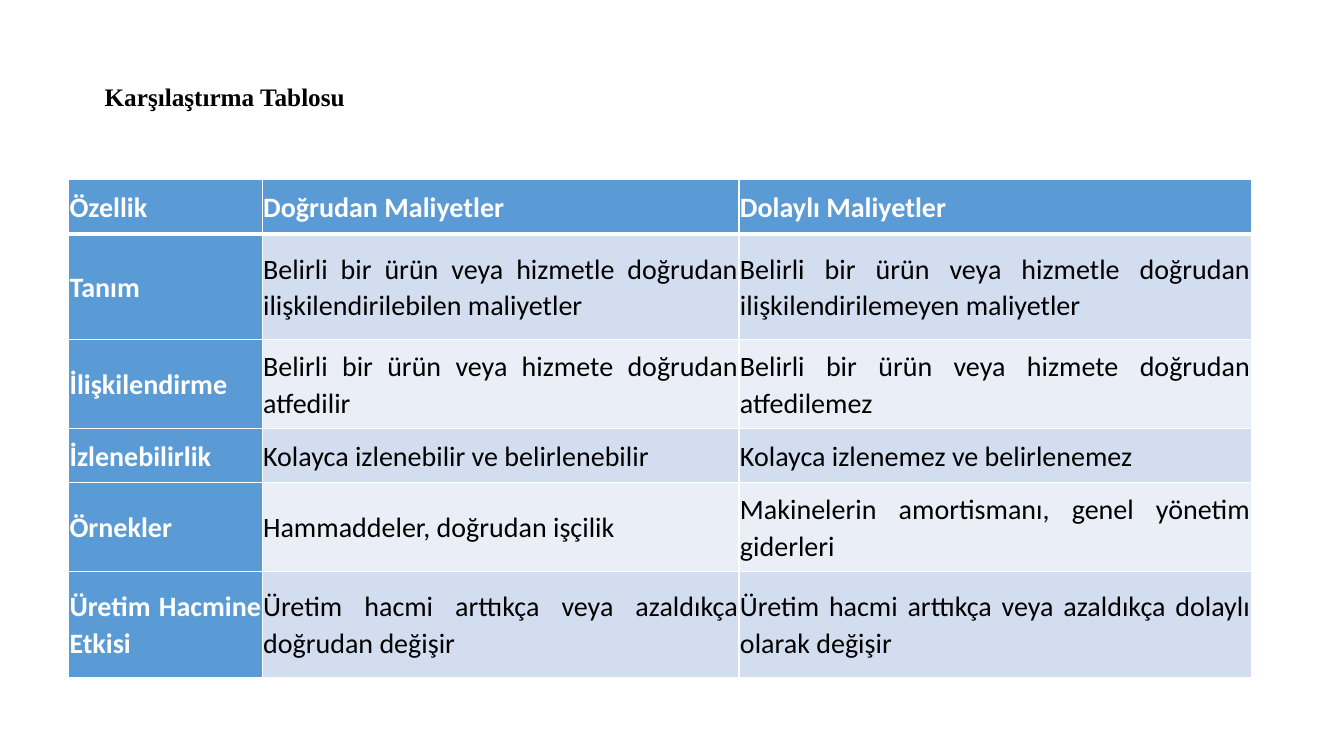
"""Build a slide with a table comparing direct and indirect costs."""
from dataclasses import dataclass

from lxml import etree
from pptx import Presentation
from pptx.dml.color import RGBColor
from pptx.enum.text import MSO_ANCHOR, MSO_AUTO_SIZE, PP_ALIGN
from pptx.oxml.ns import qn
from pptx.util import Inches, Pt

JUSTIFY = PP_ALIGN.JUSTIFY
MIDDLE = MSO_ANCHOR.MIDDLE
FIT_SHAPE = MSO_AUTO_SIZE.SHAPE_TO_FIT_TEXT

BLACK = RGBColor(0x00, 0x00, 0x00)
WHITE = RGBColor(0xFF, 0xFF, 0xFF)
BLUE = RGBColor(0x5B, 0x9B, 0xD5)
BAND_DARK = RGBColor(0xD2, 0xDE, 0xEF)
BAND_LIGHT = RGBColor(0xEA, 0xEF, 0xF7)

COLUMN_WIDTHS = (1.92, 4.73, 5.08)
CELL_MARGIN = Inches(0.01)


@dataclass(frozen=True)
class ComparisonRow:
    height: float
    feature: str
    direct: str
    indirect: str


ROWS = (
    ComparisonRow(0.54, "Özellik", "Doğrudan Maliyetler", "Dolaylı Maliyetler"),
    ComparisonRow(
        1.05,
        "Tanım",
        "Belirli bir ürün veya hizmetle doğrudan ilişkilendirilebilen maliyetler",
        "Belirli bir ürün veya hizmetle doğrudan ilişkilendirilemeyen maliyetler",
    ),
    ComparisonRow(
        0.88,
        "İlişkilendirme",
        "Belirli bir ürün veya hizmete doğrudan atfedilir",
        "Belirli bir ürün veya hizmete doğrudan atfedilemez",
    ),
    ComparisonRow(
        0.54,
        "İzlenebilirlik",
        "Kolayca izlenebilir ve belirlenebilir",
        "Kolayca izlenemez ve belirlenemez",
    ),
    ComparisonRow(
        0.88,
        "Örnekler",
        "Hammaddeler, doğrudan işçilik",
        "Makinelerin amortismanı, genel yönetim giderleri",
    ),
    ComparisonRow(
        1.05,
        "Üretim Hacmine Etkisi",
        "Üretim hacmi arttıkça veya azaldıkça doğrudan değişir",
        "Üretim hacmi arttıkça veya azaldıkça dolaylı olarak değişir",
    ),
)


def style_font(paragraph, name: str, size: int, color: RGBColor, bold: bool) -> None:
    font = paragraph.font
    font.name = name
    font.size = Pt(size)
    font.color.rgb = color
    font.bold = bold


def set_borders(cell, row_index: int) -> None:
    widths = {
        "a:lnL": 1,
        "a:lnR": 1,
        "a:lnT": 3 if row_index == 1 else 1,
        "a:lnB": 3 if row_index == 0 else 1,
    }
    properties = cell._tc.get_or_add_tcPr()
    for position, (tag, width) in enumerate(widths.items()):
        line = etree.Element(qn(tag), w=str(Pt(width)))
        fill = etree.SubElement(line, qn("a:solidFill"))
        etree.SubElement(fill, qn("a:srgbClr"), val=str(WHITE))
        properties.insert(position, line)


def fill_cell(cell, text: str, row_index: int, column_index: int) -> None:
    heading = row_index == 0 or column_index == 0
    band = BAND_DARK if row_index % 2 else BAND_LIGHT
    cell.text = text
    cell.vertical_anchor = MIDDLE
    cell.margin_left = cell.margin_right = CELL_MARGIN
    cell.margin_top = cell.margin_bottom = CELL_MARGIN
    cell.fill.solid()
    cell.fill.fore_color.rgb = BLUE if heading else band
    paragraph = cell.text_frame.paragraphs[0]
    paragraph.alignment = JUSTIFY
    paragraph.line_spacing = 1.07
    style_font(paragraph, "Calibri", 20, WHITE if heading else BLACK, heading)
    set_borders(cell, row_index)


def add_title(slide) -> None:
    title = slide.shapes.add_textbox(Inches(0.94), Inches(0.76), Inches(11.4), Inches(0.4))
    frame = title.text_frame
    frame.word_wrap = True
    frame.auto_size = FIT_SHAPE
    frame.text = "Karşılaştırma Tablosu"
    style_font(frame.paragraphs[0], "Times New Roman", 18, BLACK, True)


def add_comparison_table(slide) -> None:
    table = slide.shapes.add_table(
        len(ROWS),
        len(COLUMN_WIDTHS),
        Inches(0.68),
        Inches(1.78),
        Inches(sum(COLUMN_WIDTHS)),
        Inches(sum(row.height for row in ROWS)),
    ).table
    table.first_col = True
    for column, width in zip(table.columns, COLUMN_WIDTHS):
        column.width = Inches(width)
    for row_index, row in enumerate(ROWS):
        table.rows[row_index].height = Inches(row.height)
        for column_index, text in enumerate((row.feature, row.direct, row.indirect)):
            fill_cell(table.cell(row_index, column_index), text, row_index, column_index)


def main() -> None:
    presentation = Presentation()
    presentation.slide_width = Inches(13.33)
    presentation.slide_height = Inches(7.5)
    slide = presentation.slides.add_slide(presentation.slide_layouts[6])
    add_title(slide)
    add_comparison_table(slide)
    presentation.save("out.pptx")


if __name__ == "__main__":
    main()
